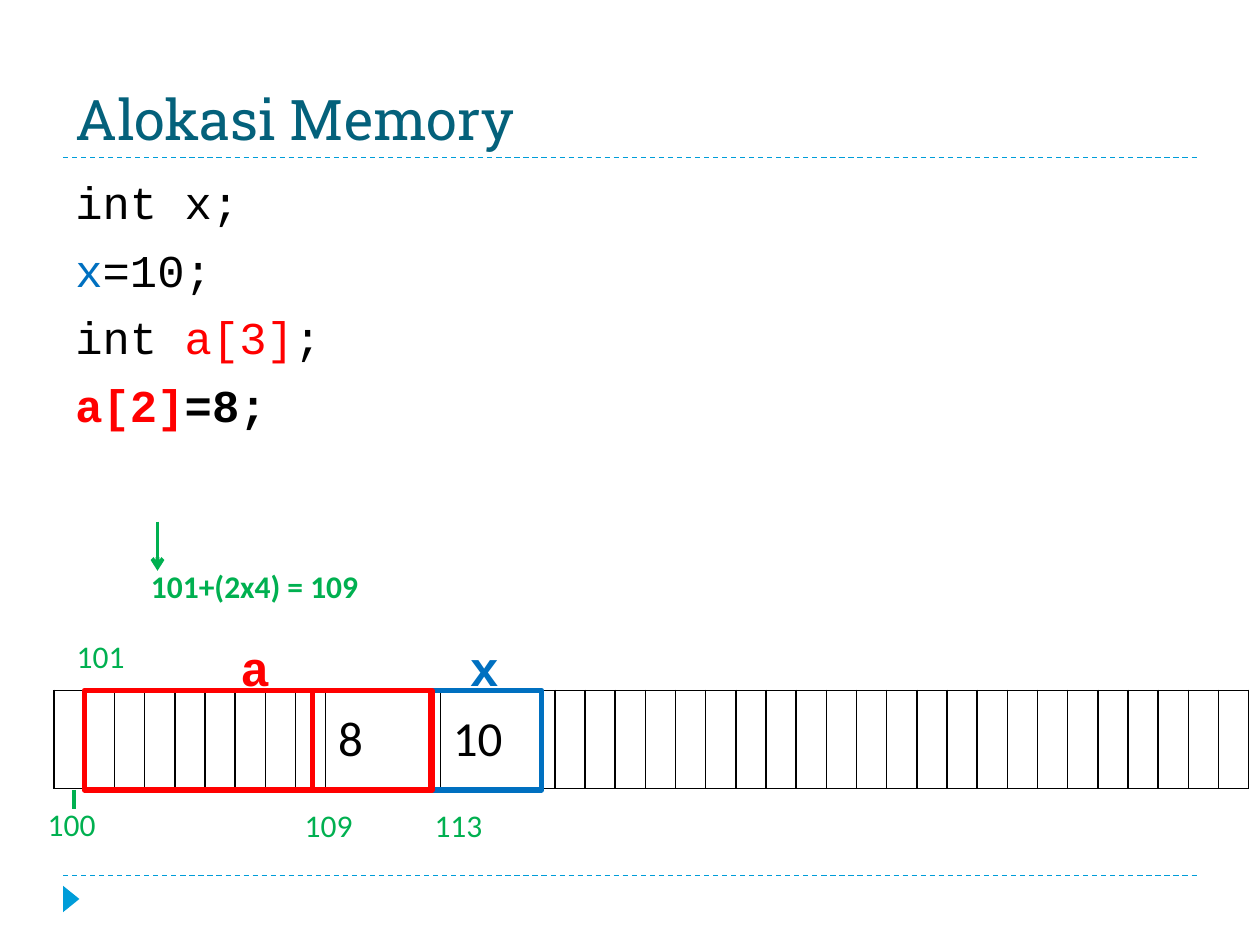
"""Build the "Alokasi Memory" slide: code, memory strip and addresses."""
from dataclasses import dataclass

from lxml.etree import SubElement
from pptx import Presentation
from pptx.dml.color import RGBColor
from pptx.enum.dml import MSO_LINE_DASH_STYLE as Dash
from pptx.enum.shapes import MSO_CONNECTOR as Connector, MSO_SHAPE as Shape
from pptx.enum.text import MSO_ANCHOR as Anchor, MSO_AUTO_SIZE as AutoSize
from pptx.oxml.ns import qn
from pptx.util import Inches, Pt

COLORS = {
    "black": "000000", "theme": "009DD9", "title": "04617B",
    "red": "FF0000", "blue": "0070C0", "green": "00B050",
}
WIDTH, HEIGHT = Inches(10), Inches(7.5)
GRID_COLUMNS = 1000
UNIT = WIDTH // GRID_COLUMNS
CELL_COUNT, STRIP_WIDTH, STRIP_TOP, STRIP_HEIGHT = 34, 911, 548, 78
VALUES = {9: "8", 10: "10"}
VALUE_WIDTH = 91
BLOCK_HEIGHT = 79


@dataclass(frozen=True)
class Area:
    left: float
    top: float
    width: float
    height: float

    def lengths(self) -> list[int]:
        return [round(part * UNIT) for part in (self.left, self.top, self.width, self.height)]


@dataclass(frozen=True)
class Label:
    text: str
    area: Area
    color: str = "green"
    size: int = 18
    font: str = "Calibri"
    bold: bool = False


@dataclass(frozen=True)
class Rule:
    start: tuple[int, int]
    end: tuple[int, int]
    color: str
    weight: float
    dashed: bool = False
    arrow: bool = False


@dataclass(frozen=True)
class Block:
    left: int
    width: int
    color: str


@dataclass(frozen=True)
class CodeLine:
    spans: tuple[tuple[str, str], ...]
    bold: bool = False


RULES = (
    Rule((50, 695), (950, 695), "theme", 0.75, dashed=True),
    Rule((50, 125), (950, 125), "theme", 0.75, dashed=True),
    Rule((125, 414), (125, 453), "green", 2.25, arrow=True),
    Rule((59, 627), (59, 642), "green", 2.25),
)
CODE = (
    CodeLine((("int x;", "black"),)),
    CodeLine((("x", "blue"), ("=10;", "black"))),
    CodeLine((("int ", "black"), ("a[3]", "red"), (";", "black"))),
    CodeLine((("a[2]", "red"), ("=8;", "black")), bold=True),
)
BLOCKS = (Block(343, 87, "blue"), Block(67, 276, "red"), Block(248, 94, "red"))
LABELS = (
    Label("101+(2x4) = 109", Area(110, 445, 187, 40), bold=True),
    Label("100", Area(28, 634, 59, 40)),
    Label("101", Area(51, 501, 59, 40)),
    Label("109", Area(232, 635, 59, 40)),
    Label("113", Area(335, 635, 59, 40)),
    Label("x", Area(363, 501, 44, 57), "blue", 28, "Courier New", True),
    Label("a", Area(181, 501, 44, 57), "red", 28, "Courier New", True),
)


def rgb(name: str) -> RGBColor:
    return RGBColor.from_string(COLORS[name])


def set_font(font, name: str, size: int, bold: bool = False) -> None:
    font.name, font.size, font.bold = name, Pt(size), bold


def draw_rule(page, rule: Rule) -> None:
    ends = [value * UNIT for value in rule.start + rule.end]
    line = page.shapes.add_connector(Connector.STRAIGHT, *ends)
    line.line.color.rgb = rgb(rule.color)
    line.line.width = Pt(rule.weight)
    if rule.dashed:
        line.line.dash_style = Dash.DASH
    if rule.arrow:
        SubElement(line.line._get_or_add_ln(), qn("a:tailEnd"), type="arrow")
    SubElement(line._element.spPr, qn("a:effectLst"))


def draw_marker(page) -> None:
    marker = page.shapes.add_shape(Shape.ISOSCELES_TRIANGLE, *Area(46, 707, 21, 13).lengths())
    marker.rotation = 90
    marker.shadow.inherit = False
    marker.fill.solid()
    marker.fill.fore_color.rgb = rgb("theme")
    marker.line.fill.background()


def draw_label(page, label: Label) -> None:
    box = page.shapes.add_textbox(*label.area.lengths())
    frame = box.text_frame
    frame.word_wrap = False
    frame.auto_size = AutoSize.SHAPE_TO_FIT_TEXT
    para = frame.paragraphs[0]
    para.text = label.text
    set_font(para.font, label.font, label.size, label.bold)
    para.font.color.rgb = rgb(label.color)


def draw_title(page) -> None:
    frame = page.shapes.add_textbox(*Area(50, 17, 900, 108).lengths()).text_frame
    frame.word_wrap = True
    frame.vertical_anchor = Anchor.BOTTOM
    para = frame.paragraphs[0]
    para.text = "Alokasi Memory"
    set_font(para.font, "Roboto Slab", 32)
    para.font.color.rgb = rgb("title")


def draw_code(page) -> None:
    frame = page.shapes.add_textbox(*Area(50, 133, 900, 540).lengths()).text_frame
    frame.word_wrap = True
    for index, line in enumerate(CODE):
        para = frame.add_paragraph() if index else frame.paragraphs[0]
        para.space_before, para.space_after = Pt(6), Pt(1.6)
        set_font(para.font, "Courier New", 26, line.bold)
        for text, color in line.spans:
            span = para.add_run()
            span.text = text
            span.font.color.rgb = rgb(color)


def draw_cell(cell, value: str) -> None:
    cell.fill.background()
    cell.vertical_anchor = Anchor.MIDDLE
    properties = cell._tc.get_or_add_tcPr()
    for index, side in enumerate(("a:lnL", "a:lnR", "a:lnT", "a:lnB")):
        border = properties.makeelement(qn(side), {"w": str(Pt(1))})
        fill = SubElement(border, qn("a:solidFill"))
        SubElement(fill, qn("a:srgbClr"), val=COLORS["black"])
        properties.insert(index, border)
    if value:
        para = cell.text_frame.paragraphs[0]
        para.text = value
        set_font(para.font, "Calibri", 28)
        para.font.color.rgb = rgb("black")


def draw_strip(page) -> None:
    area = Area(43, STRIP_TOP, STRIP_WIDTH, STRIP_HEIGHT)
    table = page.shapes.add_table(1, CELL_COUNT, *area.lengths()).table
    table.first_row = table.horz_banding = False
    narrow = (STRIP_WIDTH - len(VALUES) * VALUE_WIDTH) / (CELL_COUNT - len(VALUES))
    for index, column in enumerate(table.columns):
        column.width = round((VALUE_WIDTH if index in VALUES else narrow) * UNIT)
        draw_cell(table.cell(0, index), VALUES.get(index, ""))


def draw_block(page, block: Block) -> None:
    area = Area(block.left, STRIP_TOP, block.width, BLOCK_HEIGHT)
    frame = page.shapes.add_shape(Shape.RECTANGLE, *area.lengths())
    frame.shadow.inherit = False
    frame.fill.background()
    frame.line.color.rgb = rgb(block.color)
    frame.line.width = Pt(3)


def main() -> None:
    deck = Presentation()
    deck.slide_width, deck.slide_height = WIDTH, HEIGHT
    page = deck.slides.add_slide(deck.slide_layouts[6])
    for rule in RULES:
        draw_rule(page, rule)
    draw_marker(page)
    draw_title(page)
    draw_code(page)
    draw_strip(page)
    for block in BLOCKS:
        draw_block(page, block)
    for label in LABELS:
        draw_label(page, label)
    deck.save("out.pptx")


if __name__ == "__main__":
    main()
